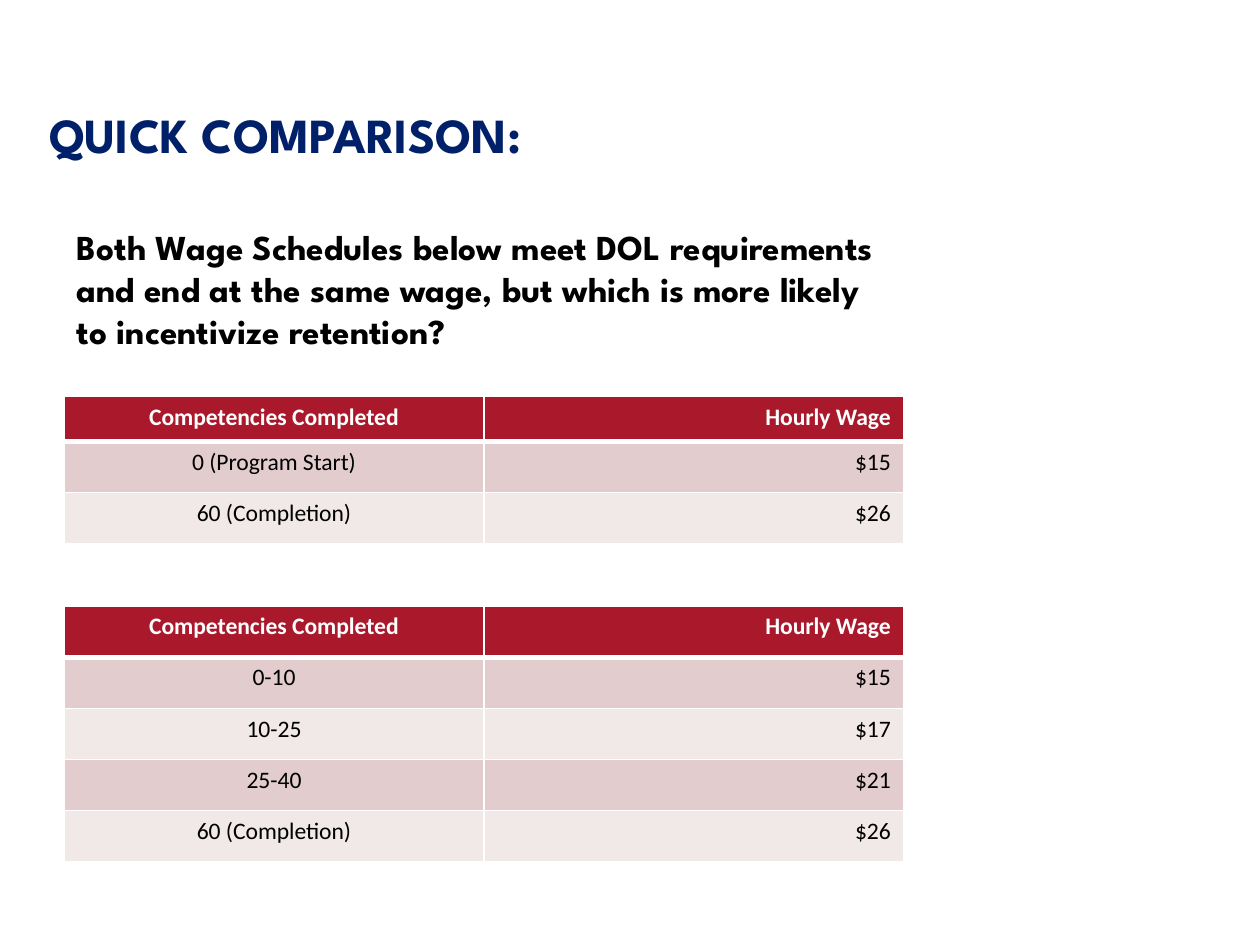
"""Build the wage schedule comparison slide."""
from dataclasses import dataclass

from lxml import etree
from pptx import Presentation
from pptx.dml.color import RGBColor
from pptx.enum.text import MSO_ANCHOR, MSO_AUTO_SIZE, PP_ALIGN
from pptx.oxml.ns import qn
from pptx.util import Emu, Inches, Pt

LEFT, CENTER, RIGHT = PP_ALIGN.LEFT, PP_ALIGN.CENTER, PP_ALIGN.RIGHT
TOP = MSO_ANCHOR.TOP
GROW = MSO_AUTO_SIZE.SHAPE_TO_FIT_TEXT
COLS, ROWS = 100, 75
WHITE, BLACK, NAVY, RED = "FFFFFF", "000000", "002069", "AA182C"
BANDS = ("E2CCCD", "F1E8E8")
HEAD = ("Competencies Completed", "Hourly Wage")
ALIGNS = (CENTER, RIGHT)
THIN, THICK = 1, 3

deck = Presentation()
deck.slide_width, deck.slide_height = Inches(10), Inches(7.5)
UNIT_X, UNIT_Y = deck.slide_width / COLS, deck.slide_height / ROWS


@dataclass
class Box:
    """A place in grid columns and rows."""
    col: float
    row: float
    wide: float
    high: float

    def emu(self) -> tuple:
        """Return left, top, width and height as lengths."""
        return (Emu(round(self.col * UNIT_X)), Emu(round(self.row * UNIT_Y)),
                Emu(round(self.wide * UNIT_X)), Emu(round(self.high * UNIT_Y)))


@dataclass
class Label:
    """Text with its place and look."""
    text: str
    box: Box
    size: float
    color: str


@dataclass
class Wages:
    """A wage table with its place, first row height and steps."""
    box: Box
    first: float
    steps: tuple


def paint(code: str) -> RGBColor:
    """Turn a hex string into a colour."""
    return RGBColor.from_string(code)


def apply(target, values: dict) -> None:
    """Set each named value on the target."""
    for name, value in values.items():
        setattr(target, name, value)


def style(para, face: str, size: float, color: str, bold: bool, align) -> None:
    """Format a paragraph and its font."""
    apply(para, {"alignment": align, "space_before": Pt(0), "line_spacing": 1.0})
    apply(para.font, {"name": face, "size": Pt(size), "bold": bold})
    para.font.color.rgb = paint(color)


def write(shape, label: Label) -> None:
    """Move a placeholder and fill it with plain text."""
    apply(shape, dict(zip(("left", "top", "width", "height"), label.box.emu())))
    frame = shape.text_frame
    frame.text = label.text
    apply(frame, {"word_wrap": True, "auto_size": GROW, "vertical_anchor": TOP})
    para = frame.paragraphs[0]
    props = para._p.get_or_add_pPr()
    props.set("marL", "0")
    props.set("indent", "0")
    etree.SubElement(props, qn("a:buNone"))
    style(para, "League Spartan", label.size, label.color, True, LEFT)


def edge(cell, row: int) -> None:
    """Draw white borders, thick between head and body."""
    props = cell._tc.get_or_add_tcPr()
    widths = {"L": THIN, "R": THIN,
              "T": THICK if row == 1 else THIN,
              "B": THICK if row == 0 else THIN}
    for side, width in widths.items():
        line = etree.SubElement(props, qn(f"a:ln{side}"), w=str(Pt(width)))
        fill = etree.SubElement(line, qn("a:solidFill"))
        etree.SubElement(fill, qn("a:srgbClr"), val=WHITE)


def tabulate(slide, wages: Wages) -> None:
    """Add a wage table with a red head and banded steps."""
    lines = (HEAD, *wages.steps)
    grid = slide.shapes.add_table(len(lines), len(HEAD), *wages.box.emu()).table
    rest = (wages.box.high - wages.first) / len(wages.steps)
    for row, line in enumerate(lines):
        high = rest if row else wages.first
        grid.rows[row].height = Emu(round(high * UNIT_Y))
        back = BANDS[(row - 1) % 2] if row else RED
        for col, text in enumerate(line):
            cell = grid.cell(row, col)
            cell.text = text
            edge(cell, row)
            cell.fill.solid()
            cell.fill.fore_color.rgb = paint(back)
            style(cell.text_frame.paragraphs[0], "Calibri", 13.5,
                  BLACK if row else WHITE, row == 0, ALIGNS[col])


LABELS = (
    Label("QUICK COMPARISON:", Box(2.9, 7.8, 62, 5.7), 28, NAVY),
    Label("Both Wage Schedules below meet DOL requirements and end at the same "
          "wage, but which is more likely to incentivize retention?",
          Box(5.1, 17.4, 66.7, 11.1), 20, BLACK),
)
TABLES = (
    Wages(Box(5.1, 31.45, 66.6, 11.7), 3.6,
          (("0 (Program Start)", "$15"), ("60 (Completion)", "$26"))),
    Wages(Box(5.1, 48.1, 66.6, 20.3), 4.06,
          (("0-10", "$15"), ("10-25", "$17"), ("25-40", "$21"),
           ("60 (Completion)", "$26"))),
)

if __name__ == "__main__":
    page = deck.slides.add_slide(deck.slide_layouts[1])
    for shape, label in zip(page.placeholders, LABELS):
        write(shape, label)
    for wages in TABLES:
        tabulate(page, wages)
    deck.save("out.pptx")
